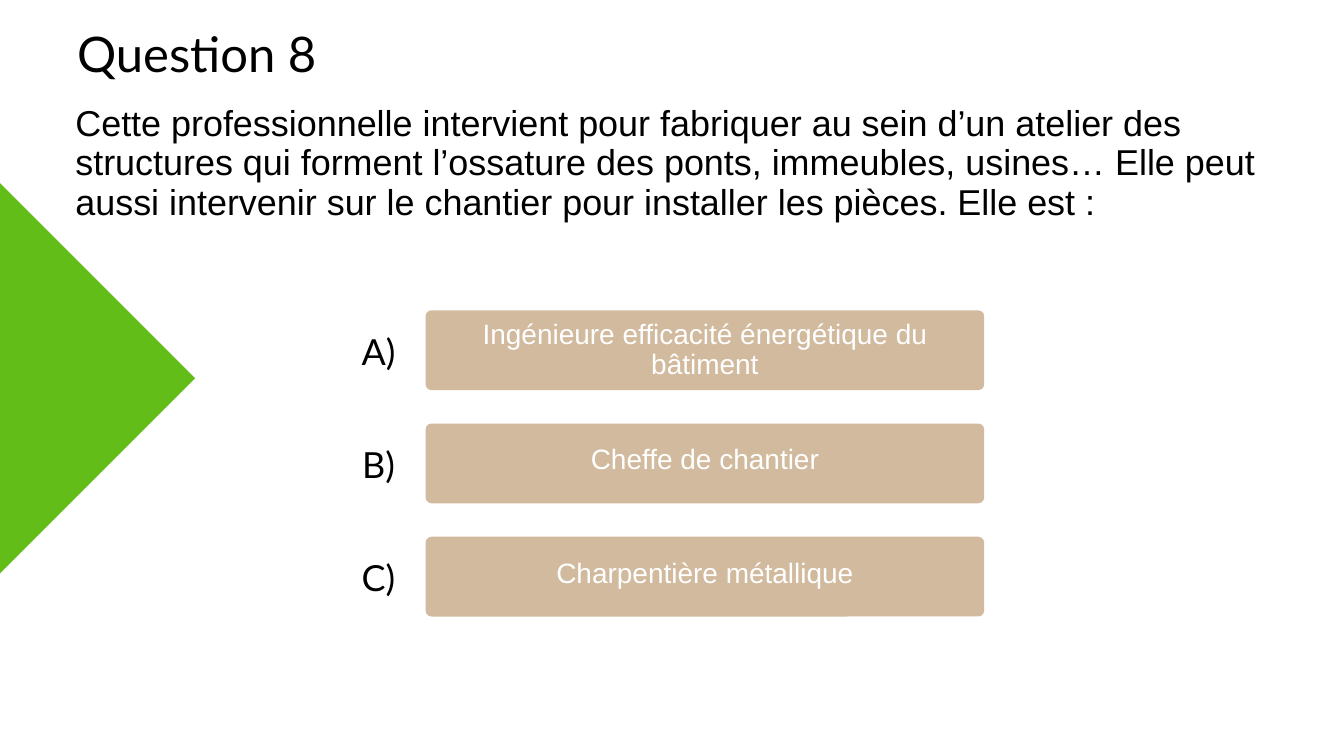
from pptx import Presentation
from pptx.dml.color import RGBColor
from pptx.enum import shapes, text
from pptx.util import Pt

THEME = {
    "black": "000000", "white": "FFFFFF", "green": "62BD19", "sand": "D1BA9D",
    "heading_font": "Lato", "body_font": "Arial",
    "title_size": 52.5, "body_size": 38.5, "answer_size": 30,
}
TITLE = "Question 8"
QUESTION = (
    "Cette professionnelle intervient pour fabriquer au sein d’un atelier des "
    "structures qui forment l’ossature des ponts, immeubles, usines… Elle peut "
    "aussi intervenir sur le chantier pour installer les pièces. Elle est :"
)
ANSWERS = [
    {"letter": "A)", "label": "Ingénieure efficacité énergétique du bâtiment",
     "offset": 9.5, "height": 70},
    {"letter": "B)", "label": "Cheffe de chantier", "offset": 23, "height": 37.5},
    {"letter": "C)", "label": "Charpentière métallique", "offset": 23, "height": 37.5},
]
BAR_LEFT, BAR_TOP, BAR_WIDTH, BAR_HEIGHT, BAR_PITCH = 456, 332.5, 598.5, 85.5, 121.3
BAR_RADIUS = 6.3
LABEL_WIDTH = 530
LETTER_LEFT, LETTER_WIDTH, LETTER_OFFSET = 385.25, 40.5, 13
DIAMOND_SIDE, DIAMOND_CENTER_Y = 420, 405.25


def add_block(slide, kind, left, top, width, height, color):
    shape = slide.shapes.add_shape(kind, Pt(left), Pt(top), Pt(width), Pt(height))
    shape.shadow.inherit = False
    shape.fill.solid()
    shape.fill.fore_color.rgb = RGBColor.from_string(THEME[color])
    shape.line.fill.background()
    return shape


def add_text(slide, words, left, top, width, height, font, size, spacing,
             color="black", align=text.PP_ALIGN.CENTER):
    box = slide.shapes.add_textbox(Pt(left), Pt(top), Pt(width), Pt(height))
    frame = box.text_frame
    frame.word_wrap = True
    frame.margin_left = frame.margin_right = frame.margin_top = frame.margin_bottom = 0
    paragraph = frame.paragraphs[0]
    paragraph.alignment = align
    paragraph.line_spacing = Pt(spacing)
    run = paragraph.add_run()
    run.text = words
    run.font.name = THEME[font]
    run.font.size = Pt(THEME[size])
    run.font.color.rgb = RGBColor.from_string(THEME[color])


def add_answer(slide, index, answer):
    top = BAR_TOP + index * BAR_PITCH
    bar = add_block(slide, shapes.MSO_SHAPE.ROUNDED_RECTANGLE,
                    BAR_LEFT, top, BAR_WIDTH, BAR_HEIGHT, "sand")
    bar.adjustments[0] = BAR_RADIUS / BAR_HEIGHT
    label_left = BAR_LEFT + (BAR_WIDTH - LABEL_WIDTH) / 2
    add_text(slide, answer["label"], label_left, top + answer["offset"], LABEL_WIDTH,
             answer["height"], "body_font", "answer_size", 32.7, "white")
    add_text(slide, answer["letter"], LETTER_LEFT, top + LETTER_OFFSET, LETTER_WIDTH,
             57.5, "heading_font", "body_size", 53.9)


def main():
    presentation = Presentation()
    presentation.slide_width, presentation.slide_height = Pt(1440), Pt(810)
    slide = presentation.slides.add_slide(presentation.slide_layouts[6])
    add_block(slide, shapes.MSO_SHAPE.DIAMOND, -DIAMOND_SIDE / 2 - 1,
              DIAMOND_CENTER_Y - DIAMOND_SIDE / 2, DIAMOND_SIDE, DIAMOND_SIDE, "green")
    add_text(slide, QUESTION, 80.75, 112.25, 1316, 131, "body_font", "body_size", 42,
             align=text.PP_ALIGN.LEFT)
    add_text(slide, TITLE, 80.75, 14.5, 260, 78.5, "heading_font", "title_size", 73.5)
    for index, answer in enumerate(ANSWERS):
        add_answer(slide, index, answer)
    presentation.save("out.pptx")


if __name__ == "__main__":
    main()
